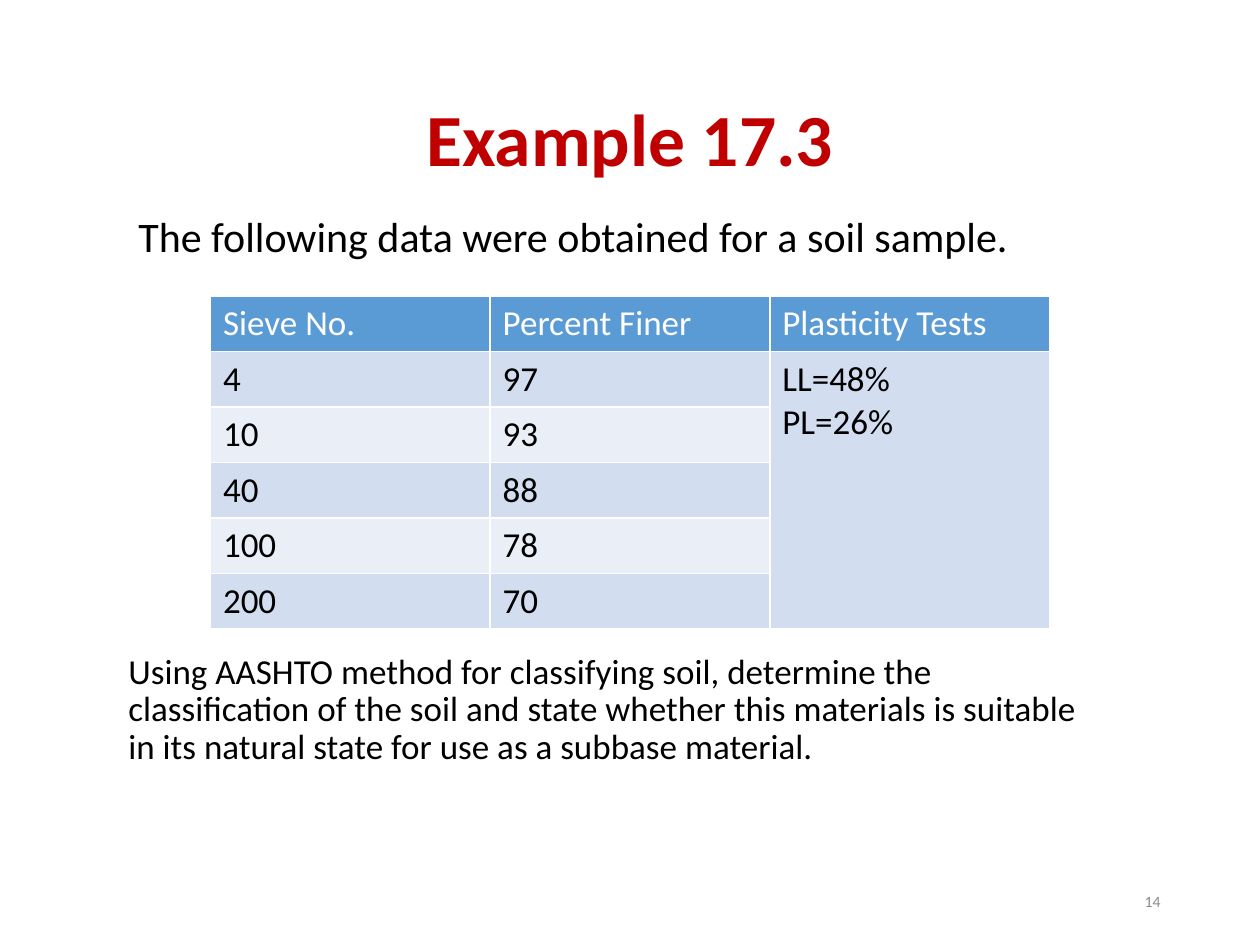
from lxml import etree
from pptx import Presentation
from pptx.dml.color import RGBColor
from pptx.enum.text import MSO_ANCHOR, MSO_AUTO_SIZE, PP_ALIGN
from pptx.oxml.ns import qn
from pptx.util import Inches, Pt

LEFT, CENTER, RIGHT = PP_ALIGN.LEFT, PP_ALIGN.CENTER, PP_ALIGN.RIGHT
TOP, MIDDLE, BOTTOM = MSO_ANCHOR.TOP, MSO_ANCHOR.MIDDLE, MSO_ANCHOR.BOTTOM
NO_AUTOFIT = MSO_AUTO_SIZE.NONE
TITLE_ONLY = 5

WHITE = RGBColor(0xFF, 0xFF, 0xFF)
BLACK = RGBColor(0x00, 0x00, 0x00)
RED = RGBColor(0xC0, 0x00, 0x00)
GRAY = RGBColor(0x8C, 0x8C, 0x8C)
HEADER_BLUE = RGBColor(0x5B, 0x9B, 0xD5)
BANDS = (RGBColor(0xD2, 0xDE, 0xEF), RGBColor(0xEA, 0xEF, 0xF7))

HEADINGS = ("Sieve No.", "Percent Finer", "Plasticity Tests")
SIEVE_DATA = (("4", "97"), ("10", "93"), ("40", "88"), ("100", "78"), ("200", "70"))
PLASTICITY = "LL=48%\nPL=26%"


class SlideBuilder:
    font_name = "Calibri"

    def __init__(self, slide):
        self.slide = slide

    def fill_text(self, frame, text, size, color, bold=False, **paragraph_format):
        frame.text = text
        font_format = {"name": self.font_name, "size": Pt(size), "bold": bold}
        for para in frame.paragraphs:
            for name, value in paragraph_format.items():
                setattr(para, name, value)
            for span in para.runs:
                for name, value in font_format.items():
                    setattr(span.font, name, value)
                span.font.color.rgb = color

    def set_frame(self, box, anchor):
        frame_format = {"word_wrap": True, "auto_size": NO_AUTOFIT, "vertical_anchor": anchor}
        for name, value in frame_format.items():
            setattr(box.text_frame, name, value)

    def title(self, text, left, top, width, height):
        box = self.slide.shapes.title
        place = {"left": left, "top": top, "width": width, "height": height}
        for name, value in place.items():
            setattr(box, name, Inches(value))
        self.set_frame(box, BOTTOM)
        self.fill_text(box.text_frame, text, 42, RED, bold=True,
                       alignment=CENTER, line_spacing=0.9)

    def text(self, text, place, size, color=BLACK, anchor=TOP, **paragraph_format):
        box = self.slide.shapes.add_textbox(*map(Inches, place))
        self.set_frame(box, anchor)
        self.fill_text(box.text_frame, text, size, color, **paragraph_format)

    def border(self, cell):
        properties = cell._tc.get_or_add_tcPr()
        for position, side in enumerate(("lnL", "lnR", "lnT", "lnB")):
            line = etree.Element(qn(f"a:{side}"), w=str(Pt(1)))
            fill = etree.SubElement(line, qn("a:solidFill"))
            etree.SubElement(fill, qn("a:srgbClr"), val=str(WHITE))
            properties.insert(position, line)

    def table(self, rows, left, top, column_width, row_height):
        row_count, column_count = len(rows), len(rows[0])
        table = self.slide.shapes.add_table(
            row_count, column_count, Inches(left), Inches(top),
            Inches(column_width * column_count), Inches(row_height * row_count)).table
        for column in table.columns:
            column.width = Inches(column_width)
        for row_index, row in enumerate(rows):
            is_header = row_index == 0
            for column_index, text in enumerate(row):
                cell = table.cell(row_index, column_index)
                cell.fill.solid()
                cell.fill.fore_color.rgb = HEADER_BLUE if is_header else BANDS[(row_index - 1) % 2]
                self.fill_text(cell.text_frame, text, 20, WHITE if is_header else BLACK)
                self.border(cell)
        return table


def main():
    deck = Presentation()
    deck.slide_width, deck.slide_height = Inches(10), Inches(7.5)
    page = SlideBuilder(deck.slides.add_slide(deck.slide_layouts[TITLE_ONLY]))

    body_format = {"alignment": LEFT, "line_spacing": 0.9, "space_before": Pt(7.5)}
    page.title("Example 17.3", 0.69, 0.4, 8.62, 1.1)
    page.text("The following data were obtained for a soil sample.",
              (1, 1.67, 7.5, 1.42), 24, **body_format)

    plasticity_column = [PLASTICITY] + [""] * (len(SIEVE_DATA) - 1)
    rows = [HEADINGS] + [(*pair, test) for pair, test in zip(SIEVE_DATA, plasticity_column)]
    table = page.table(rows, 1.67, 2.35, 2.22, 0.44)
    table.cell(1, 2).merge(table.cell(len(SIEVE_DATA), 2))

    page.text("Using AASHTO method for classifying soil, determine the classification of "
              "the soil and state whether this materials is suitable in its natural state "
              "for use as a subbase material.",
              (0.92, 5.14, 7.92, 1.81), 20, **body_format)
    page.text("14", (7.06, 6.95, 2.25, 0.4), 9, GRAY, MIDDLE, alignment=RIGHT)
    deck.save("out.pptx")


if __name__ == "__main__":
    main()
